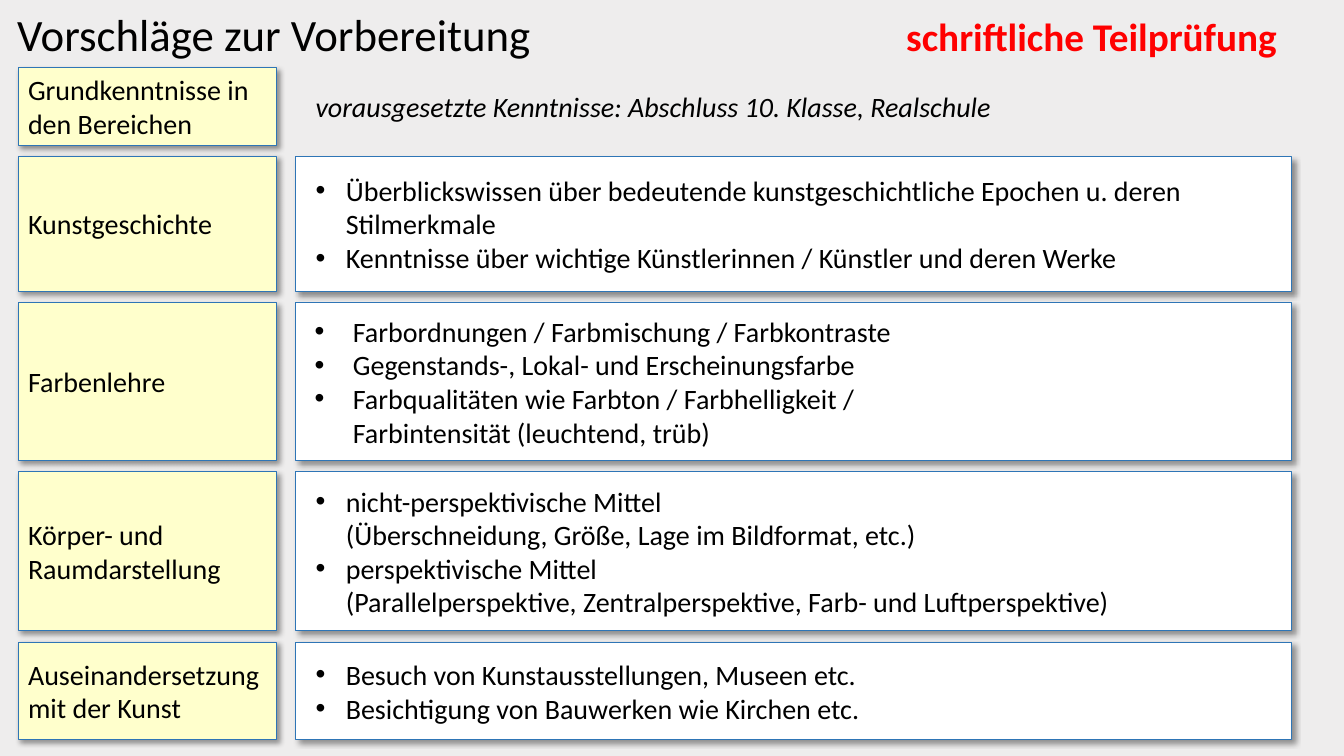
from lxml.etree import SubElement
from pptx import Presentation
from pptx.dml.color import RGBColor
from pptx.enum.shapes import MSO_SHAPE as SHAPE
from pptx.enum.text import MSO_ANCHOR as ANCHOR, MSO_AUTO_SIZE as AUTO, PP_ALIGN as ALIGN
from pptx.oxml.ns import qn
from pptx.util import Inches, Pt

BACKGROUND = RGBColor(0xEE, 0xED, 0xED)
BLACK = RGBColor(0, 0, 0)
RED = RGBColor(0xFF, 0, 0)
WHITE = RGBColor(0xFF, 0xFF, 0xFF)
YELLOW = RGBColor(0xFF, 0xFF, 0xCC)
BLUE = RGBColor(0x2E, 0x75, 0xB6)

LABEL_X, LABEL_W = 0.18, 2.56
LIST_X, LIST_W = 2.93, 9.88
TOP, GAP, HEAD_H = 0.67, 0.11, 0.77

TOPICS = [
    ("Kunstgeschichte", 1.34, 0.4, 0.3, [
        "Überblickswissen über bedeutende kunstgeschichtliche Epochen u. deren Stilmerkmale",
        "Kenntnisse über wichtige Künstlerinnen / Künstler und deren Werke"]),
    ("Farbenlehre", 1.57, 0.47, 0.38, [
        "Farbordnungen / Farbmischung / Farbkontraste",
        "Gegenstands-, Lokal- und Erscheinungsfarbe",
        "Farbqualitäten wie Farbton / Farbhelligkeit /\nFarbintensität (leuchtend, trüb)"]),
    ("Körper- und Raumdarstellung", 1.58, 0.4, 0.3, [
        "nicht-perspektivische Mittel\n(Überschneidung, Größe, Lage im Bildformat, etc.)",
        "perspektivische Mittel\n(Parallelperspektive, Zentralperspektive, Farb- und Luftperspektive)"]),
    ("Auseinandersetzung mit der Kunst", 0.97, 0.4, 0.3, [
        "Besuch von Kunstausstellungen, Museen etc.",
        "Besichtigung von Bauwerken wie Kirchen etc."]),
]


def place(sp, x, y, w, h):
    """Move and size a shape, given inches."""
    sp.left, sp.top, sp.width, sp.height = (Inches(v) for v in (x, y, w, h))


def add_bullet(p, margin, hanging):
    """Give a paragraph a round bullet with a hanging indent."""
    pPr = p._p.get_or_add_pPr()
    pPr.set("marL", str(Inches(margin)))
    pPr.set("indent", str(-Inches(hanging)))
    SubElement(pPr, qn("a:buFont"), typeface="Arial")
    SubElement(pPr, qn("a:buChar"), char="•")


def write(sp, *texts, size=20, color=BLACK, bold=False, italic=False,
          anchor=ANCHOR.MIDDLE, bullet=None, margin_left=0.1):
    """Fill a shape with formatted paragraphs."""
    tf = sp.text_frame
    tf.word_wrap = True
    tf.auto_size = AUTO.NONE
    tf.vertical_anchor = anchor
    tf.margin_left = Inches(margin_left)
    for i, text in enumerate(texts):
        p = tf.add_paragraph() if i else tf.paragraphs[0]
        p.text = text
        if bullet:
            add_bullet(p, *bullet)
        p.alignment = ALIGN.LEFT
        p.space_before = Pt(0)
        for r in p.runs:
            font = r.font
            font.name, font.size = "Calibri", Pt(size)
            font.bold, font.italic = bold, italic
            font.color.rgb = color
        for br in p._p.findall(qn("a:br")):
            SubElement(br, qn("a:rPr"), sz=str(size * 100))


def style_box(sp, fill):
    """Give a box its fill, blue outline and soft shadow."""
    sp.fill.solid()
    sp.fill.fore_color.rgb = fill
    sp.line.color.rgb = BLUE
    sp.line.width = Pt(0.75)
    sp.shadow.inherit = False
    effects = sp._element.spPr.find(qn("a:effectLst"))
    shadow = SubElement(effects, qn("a:outerShdw"), blurRad=str(Pt(4)), dist=str(Pt(3)),
                        dir="2700000", algn="tl", rotWithShape="0")
    color = SubElement(shadow, qn("a:srgbClr"), val="000000")
    SubElement(color, qn("a:alpha"), val="40000")


def add_label(slide, text, y, h):
    """Add a yellow label in the left column."""
    sp = slide.shapes.add_shape(SHAPE.RECTANGLE, 0, 0, 0, 0)
    place(sp, LABEL_X, y, LABEL_W, h)
    style_box(sp, YELLOW)
    write(sp, text)


def add_text(slide, text, x, y, w, h, **formats):
    """Add a text box."""
    sp = slide.shapes.add_textbox(0, 0, 0, 0)
    place(sp, x, y, w, h)
    write(sp, text, **formats)


def fill_list(sp, items, y, h, bullet):
    """Turn a body placeholder into a white bulleted box."""
    place(sp, LIST_X, y, LIST_W, h)
    style_box(sp, WHITE)
    write(sp, *items, bullet=bullet)


def main():
    """Build the slide and save it."""
    prs = Presentation()
    prs.slide_width, prs.slide_height = Inches(13.33), Inches(7.5)
    slide = prs.slides.add_slide(prs.slide_layouts.get_by_name("Comparison"))
    slide.background.fill.solid()
    slide.background.fill.fore_color.rgb = BACKGROUND

    title = slide.shapes.title
    place(title, 0.07, 0.02, 5.5, 0.64)
    write(title, "Vorschläge zur Vorbereitung", size=32, anchor=ANCHOR.TOP)
    add_text(slide, "schriftliche Teilprüfung", 8.89, 0.07, 4.1, 0.57,
             size=28, color=RED, bold=True, anchor=ANCHOR.TOP)

    add_label(slide, "Grundkenntnisse in den Bereichen", TOP, HEAD_H)
    add_text(slide, "vorausgesetzte Kenntnisse: Abschluss 10. Klasse, Realschule",
             LIST_X, TOP, LIST_W, HEAD_H, italic=True, margin_left=0.2)

    bodies = [sp for sp in slide.placeholders if sp.placeholder_format.idx > 0]
    y = TOP + HEAD_H + GAP
    for body, (label, h, margin, hanging, items) in zip(bodies, TOPICS):
        add_label(slide, label, y, h)
        fill_list(body, items, y, h, (margin, hanging))
        y += h + GAP

    prs.save("out.pptx")


if __name__ == "__main__":
    main()
